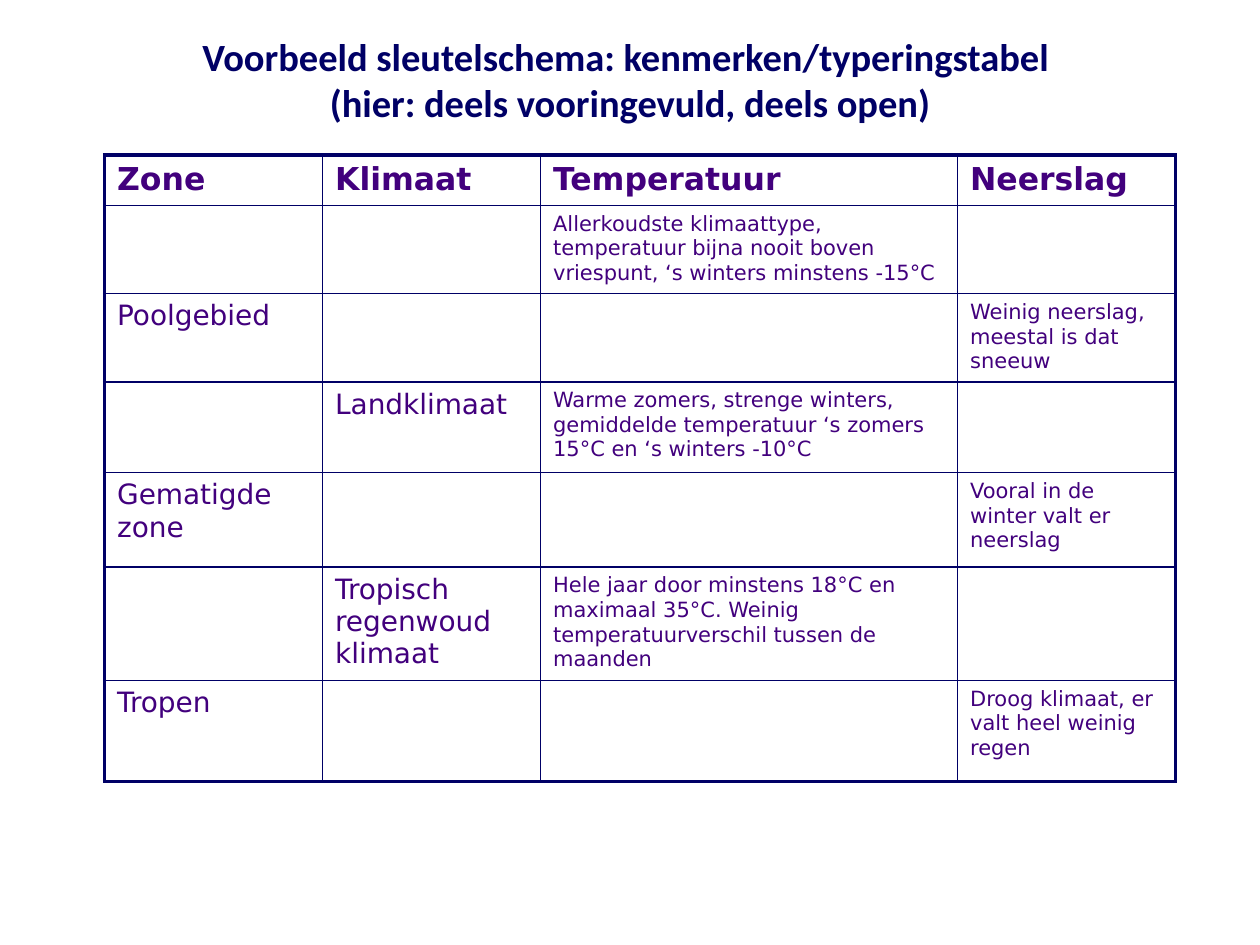
from lxml import etree
from pptx import Presentation
from pptx import util as u
from pptx.dml import color
from pptx.enum import text
from pptx.oxml import ns

NAVY = "000066"
PLUM = "42007D"
TITLE = [
    "Voorbeeld sleutelschema: kenmerken/typeringstabel ",
    "(hier: deels vooringevuld, deels open)",
]
COLS = [1.73, 1.73, 3.31, 1.73]
HEIGHTS = [0.4, 0.7, 0.7, 0.72, 0.75, 0.9, 0.8]
ROWS = [
    ["Zone", "Klimaat", "Temperatuur", "Neerslag"],
    ["", "", "Allerkoudste klimaattype, temperatuur bijna nooit boven "
     "vriespunt, ‘s winters minstens -15°C", ""],
    ["Poolgebied", "", "", "Weinig neerslag, meestal is dat sneeuw"],
    ["", "Landklimaat", "Warme zomers, strenge winters, gemiddelde "
     "temperatuur ‘s zomers 15°C en ‘s winters -10°C", ""],
    ["Gematigde zone", "", "", "Vooral in de winter valt er neerslag"],
    ["", "Tropisch regenwoud klimaat", "Hele jaar door minstens 18°C en "
     "maximaal 35°C. Weinig temperatuurverschil tussen de maanden", ""],
    ["Tropen", "", "", "Droog klimaat, er valt heel weinig regen"],
]


def paint(font, hue):
    font.color.rgb = color.RGBColor.from_string(hue)


def add_run(para, words, face, size, hue, bold):
    run = para.add_run()
    run.text = words
    run.font.name = face
    run.font.size = u.Pt(size)
    run.font.bold = bold
    paint(run.font, hue)


def add_title(slide):
    box = slide.shapes.add_textbox(
        u.Inches(0.75), u.Inches(0.21), u.Inches(8.5), u.Inches(0.42))
    frame = box.text_frame
    frame.word_wrap = True
    frame.vertical_anchor = text.MSO_ANCHOR.TOP
    para = frame.paragraphs[0]
    para.alignment = text.PP_ALIGN.CENTER
    for i, line in enumerate(TITLE):
        if i:
            para.add_line_break()
        add_run(para, line, "Calibri", 22, NAVY, True)


def add_edge(cell, side, hue, width):
    props = cell._tc.get_or_add_tcPr()
    edge = etree.SubElement(props, ns.qn("a:ln" + side), w=str(u.Pt(width)))
    fill = etree.SubElement(edge, ns.qn("a:solidFill"))
    etree.SubElement(fill, ns.qn("a:srgbClr"), val=hue)


def fill_cell(cell, words, row, col):
    outer = {
        "L": col == 0,
        "R": col == len(COLS) - 1,
        "T": row == 0,
        "B": row == len(ROWS) - 1,
    }
    for side, thick in outer.items():
        add_edge(cell, side, NAVY, 2.25 if thick else 1)
    cell.fill.background()
    if words:
        size = 18 if row == 0 else 16 if col < 2 else 12
        para = cell.text_frame.paragraphs[0]
        add_run(para, words, "DejaVu Sans", size, PLUM, row == 0)


def add_grid(slide):
    frame = slide.shapes.add_table(
        len(ROWS), len(COLS), u.Inches(0.83), u.Inches(1.23),
        u.Inches(sum(COLS)), u.Inches(sum(HEIGHTS)))
    table = frame.table
    table.horz_banding = False
    table.first_row = False
    for col, width in zip(table.columns, COLS):
        col.width = u.Inches(width)
    for row, height in zip(table.rows, HEIGHTS):
        row.height = u.Inches(height)
    for r, line in enumerate(ROWS):
        for c, words in enumerate(line):
            fill_cell(table.cell(r, c), words, r, c)


def main():
    deck = Presentation()
    deck.slide_width = u.Inches(10)
    deck.slide_height = u.Inches(7.5)
    slide = deck.slides.add_slide(deck.slide_layouts[6])
    add_title(slide)
    add_grid(slide)
    deck.save("out.pptx")


if __name__ == "__main__":
    main()
